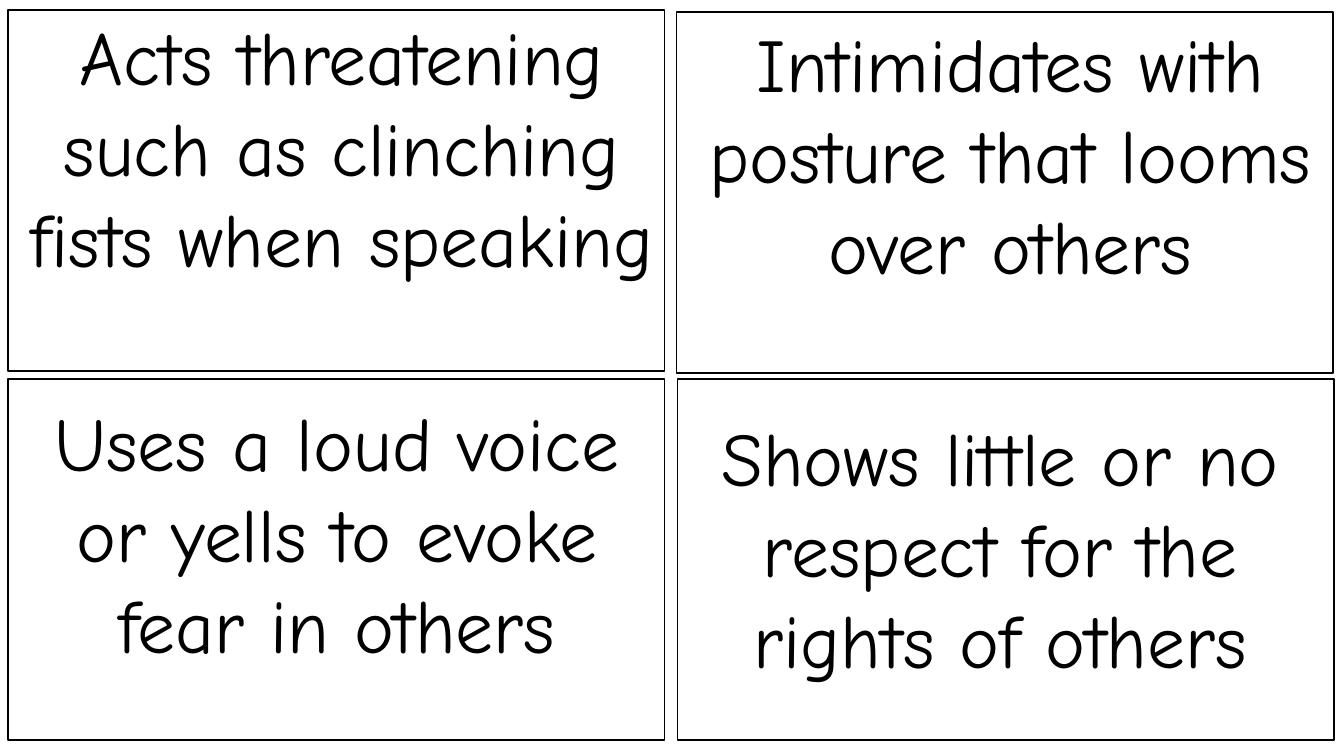
from pptx import Presentation
from pptx import util as u
from pptx.dml.color import RGBColor
from pptx.enum import shapes, text

PX = u.Inches(1) // 100  # 100 px to the inch
SLIDE_W, SLIDE_H = 1333, 750
CARD_W, CARD_H = 651, 358
CAPTION_W = 640

BLACK = RGBColor(0x00, 0x00, 0x00)
WHITE = RGBColor(0xFF, 0xFF, 0xFF)

FONT_FORMAT = {"name": "Comic Neue", "size": u.Pt(54)}
FRAME_FORMAT = {
    "word_wrap": True,
    "auto_size": text.MSO_AUTO_SIZE.SHAPE_TO_FIT_TEXT,
    "vertical_anchor": text.MSO_ANCHOR.TOP,
}

# Card left and top, caption offset from the card, caption height, wording
CARDS = [
    (8, 10, 11, -5, 374, "Acts threatening such as clinching fists when speaking"),
    (671, 12, 11, 0, 374, "Intimidates with posture that looms over others"),
    (8, 376, 6, 12, 283, "Uses a loud voice or yells to evoke fear in others"),
    (672, 376, 0, 27, 283, "Shows little or no respect for the rights of others"),
]


def px(*lengths):
    return [u.Emu(length * PX) for length in lengths]


def apply_format(target, values):
    for name, value in values.items():
        setattr(target, name, value)


def add_card(slide, left, top, dx, dy, caption_h, wording):
    # Outlined card
    card = slide.shapes.add_shape(
        shapes.MSO_SHAPE.RECTANGLE, *px(left, top, CARD_W, CARD_H))
    card.shadow.inherit = False
    card.fill.solid()
    card.fill.fore_color.rgb = WHITE
    card.line.color.rgb = BLACK
    card.line.width = u.Pt(1)

    # Behaviour caption
    caption = slide.shapes.add_textbox(
        *px(left + dx, top + dy, CAPTION_W, caption_h)).text_frame
    apply_format(caption, FRAME_FORMAT)
    behaviour = caption.paragraphs[0]
    behaviour.alignment = text.PP_ALIGN.CENTER
    run = behaviour.add_run()
    run.text = wording
    apply_format(run.font, FONT_FORMAT)
    run.font.color.rgb = BLACK


def main():
    deck = Presentation()
    deck.slide_width, deck.slide_height = px(SLIDE_W, SLIDE_H)
    slide = deck.slides.add_slide(deck.slide_layouts[6])
    for card in CARDS:
        add_card(slide, *card)
    deck.save("out.pptx")


if __name__ == "__main__":
    main()
